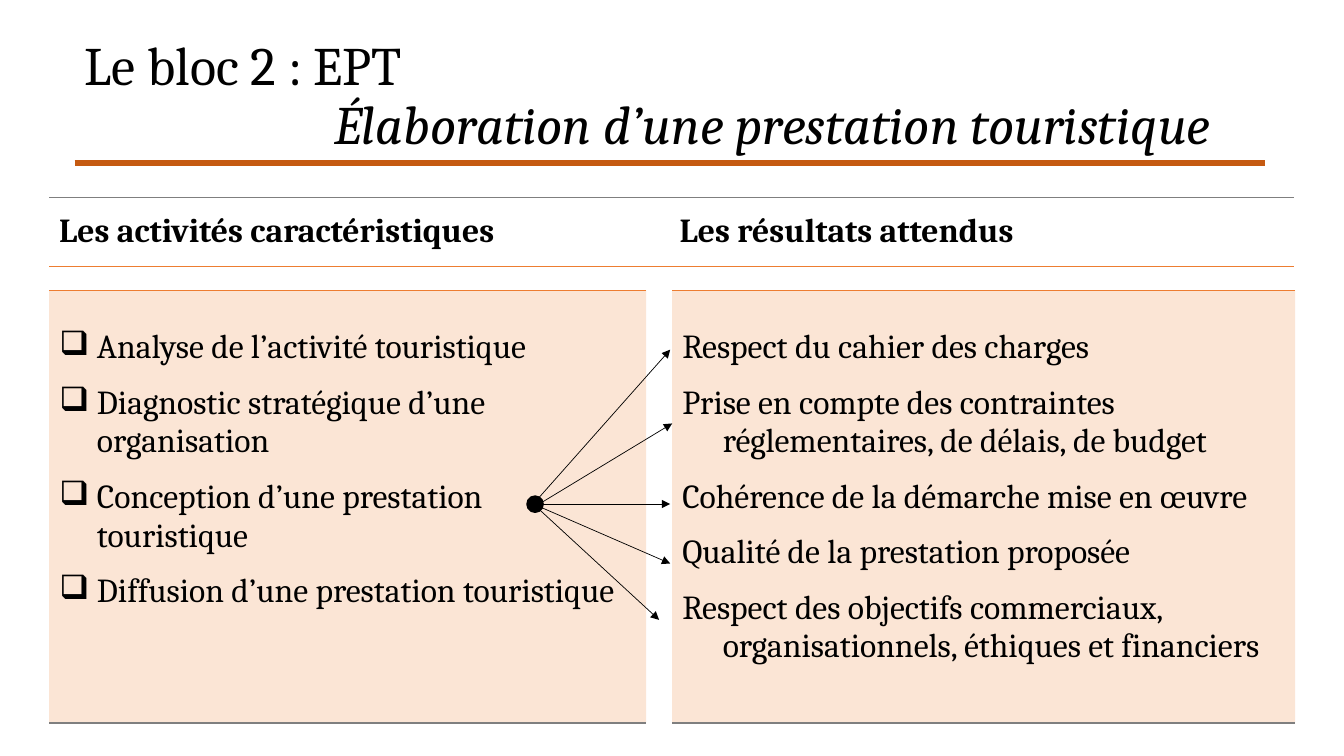
from dataclasses import dataclass

from lxml.etree import SubElement as Sub
from pptx import Presentation
from pptx.dml.color import RGBColor as Rgb
from pptx.enum.shapes import MSO_CONNECTOR as Conn, MSO_SHAPE as Shape
from pptx.enum.text import MSO_ANCHOR as Anchor
from pptx.oxml.ns import qn
from pptx.util import Cm, Pt


@dataclass(frozen=True)
class Theme:
    font: str = "Cambria"
    ink: str = "000000"
    rule: str = "C55A11"
    edge: str = "ED7D31"
    grey: str = "7F7F7F"
    title: float = 38.7
    body: float = 24


THEME = Theme()
LEFT = 1.24
SPLIT = 16.28
HEADS = (
    ("Les activités caractéristiques", LEFT, 15.04, 0.25),
    ("Les résultats attendus", SPLIT, 16.33, 0.85),
)
TASKS = (
    "Analyse de l’activité touristique",
    "Diagnostic stratégique d’une organisation",
    "Conception d’une prestation touristique",
    "Diffusion d’une prestation touristique",
)
GOALS = (
    "Respect du cahier des charges",
    "Prise en compte des contraintes réglementaires, de délais, de budget",
    "Cohérence de la démarche mise en œuvre",
    "Qualité de la prestation proposée",
    "Respect des objectifs commerciaux, organisationnels, éthiques et financiers",
)
HUB = (13.44, 12.7)
RAYS = (
    (HUB, (16.89, 8.81)),
    ((13.34, 12.85), (16.94, 10.67)),
    (HUB, (16.89, 12.7)),
    (HUB, (16.89, 14.2)),
    (HUB, (16.61, 15.62)),
)


def write(para, text, size=THEME.body, bold=False, italic=False,
          after=0, space=None, indent=0, hang=0, bullet=None):
    run = para.add_run()
    run.text = text
    font = run.font
    font.name, font.size = THEME.font, Pt(size)
    font.bold, font.italic = bold, italic
    font.color.rgb = Rgb.from_string(THEME.ink)
    para.space_after = Pt(after)
    if space:
        para.line_spacing = space
    props = para._p.get_or_add_pPr()
    props.set("marL", str(Cm(indent)))
    props.set("indent", str(-Cm(hang)))
    if bullet:
        Sub(props, qn("a:buChar"), char=bullet)


def border(cell, side, color=None, width=1):
    props = cell._tc.get_or_add_tcPr()
    line = Sub(props, qn("a:ln" + side), w=str(Pt(width)))
    if color:
        fill = Sub(line, qn("a:solidFill"))
        Sub(fill, qn("a:srgbClr"), val=color)
    else:
        Sub(line, qn("a:noFill"))


def panel(slide, x, y, w, h, top, base):
    table = slide.shapes.add_table(1, 1, Cm(x), Cm(y), Cm(w), Cm(h)).table
    table.first_row = table.horz_banding = False
    cell = table.cell(0, 0)
    for side, color in (("L", None), ("R", None), ("T", top), ("B", base)):
        border(cell, side, color)
    cell.fill.background()
    return cell


def head(slide, text, x, w, pad):
    cell = panel(slide, x, 4.98, w, 1.73, THEME.grey, THEME.edge)
    cell.vertical_anchor = Anchor.MIDDLE
    cell.margin_left = Cm(pad)
    write(cell.text_frame.paragraphs[0], text, bold=True)


def body(slide, items, x, w, indent, bullet=None):
    cell = panel(slide, x, 7.32, w, 10.9, THEME.edge, THEME.grey)
    cell.fill.solid()
    cell.fill.fore_color.rgb = Rgb.from_string(THEME.edge)
    tint = cell._tc.tcPr.find(qn("a:solidFill"))[0]
    Sub(tint, qn("a:alpha"), val="20000")
    cell.margin_top = Cm(0.96)
    frame = cell.text_frame
    for i, item in enumerate(items):
        para = frame.add_paragraph() if i else frame.paragraphs[0]
        write(para, item, after=12, indent=indent, hang=indent, bullet=bullet)


def line(slide, start, end, color, width, arrow=False):
    ends = [Cm(v) for v in (*start, *end)]
    link = slide.shapes.add_connector(Conn.STRAIGHT, *ends)
    link.line.color.rgb = Rgb.from_string(color)
    link.line.width = Pt(width)
    if arrow:
        Sub(link.line._get_or_add_ln(), qn("a:tailEnd"), type="triangle")
    Sub(link._element.spPr, qn("a:effectLst"))


def dot(slide, x, y, size):
    mark = slide.shapes.add_shape(
        Shape.FLOWCHART_CONNECTOR, Cm(x), Cm(y), Cm(size), Cm(size))
    mark.shadow.inherit = False
    mark.fill.solid()
    mark.fill.fore_color.rgb = Rgb.from_string(THEME.ink)
    mark.line.color.rgb = Rgb.from_string(THEME.ink)
    mark.line.width = Pt(1)


def title(slide):
    box = slide.shapes.add_textbox(Cm(1.88), Cm(0.81), Cm(30), Cm(3.3))
    frame = box.text_frame
    frame.word_wrap = True
    frame.vertical_anchor = Anchor.MIDDLE
    write(frame.paragraphs[0], "Le bloc 2 : EPT", size=THEME.title, space=0.9)
    write(frame.add_paragraph(), "Élaboration d’une prestation touristique",
          size=THEME.title, space=0.9, italic=True, indent=6.3)
    line(slide, (1.88, 4.11), (31.88, 4.11), THEME.rule, 4.5)


def main():
    deck = Presentation()
    deck.slide_width, deck.slide_height = Cm(33.87), Cm(19.05)
    slide = deck.slides.add_slide(deck.slide_layouts[6])
    title(slide)
    body(slide, TASKS, LEFT, 15.04, 0.95, bullet="❑")
    body(slide, GOALS, 16.94, 15.7, 1.02)
    for start, end in RAYS:
        line(slide, start, end, THEME.ink, 0.5, arrow=True)
    dot(slide, 13.28, 12.5, 0.41)
    for item in HEADS:
        head(slide, *item)
    deck.save("out.pptx")


if __name__ == "__main__":
    main()
